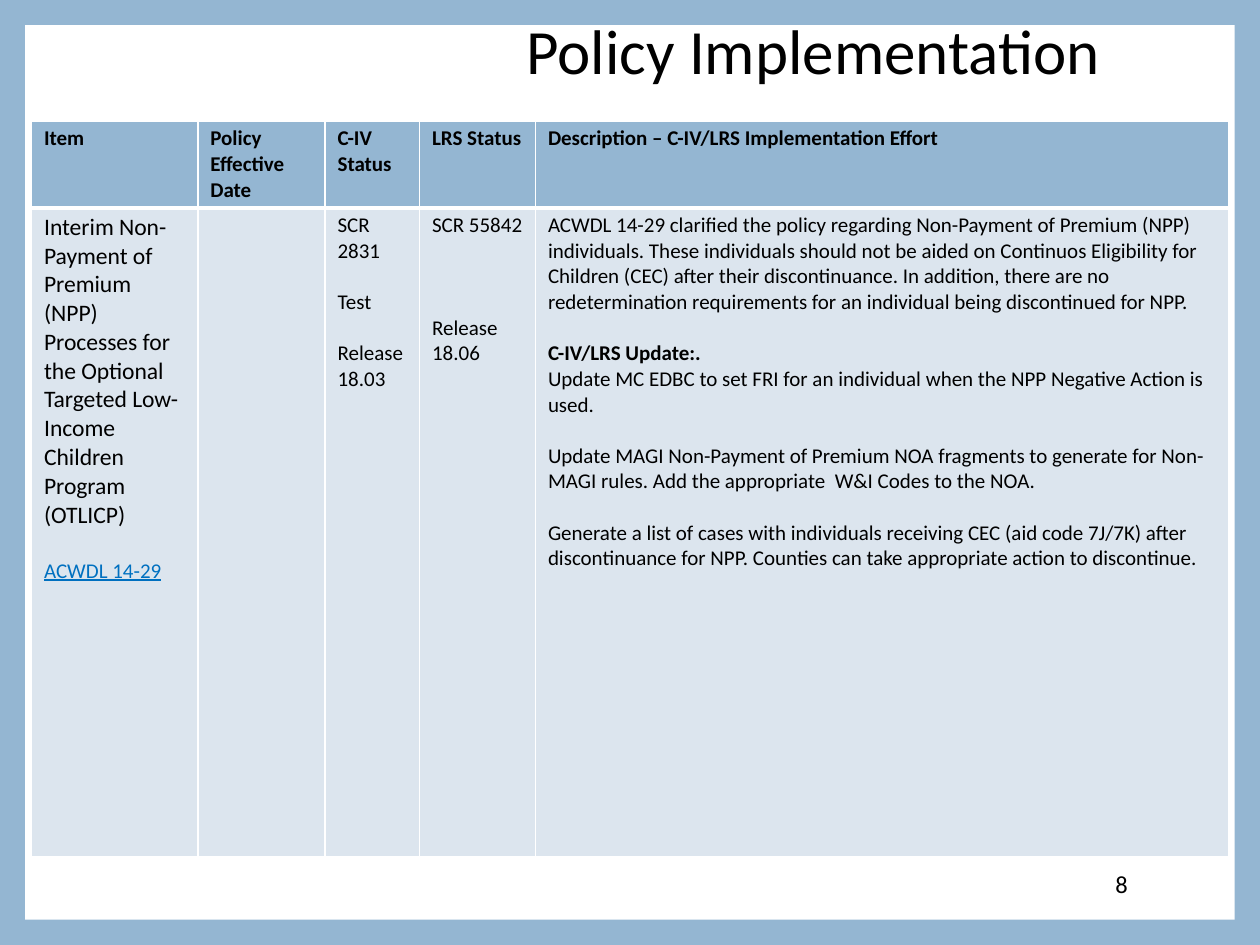
import pptx
import pptx.util
import pptx.dml.color
import pptx.enum.shapes
import pptx.enum.text
from lxml import etree
from pptx.util import Inches, Pt

RGBColor = pptx.dml.color.RGBColor
PP_ALIGN = pptx.enum.text.PP_ALIGN
MIDDLE = pptx.enum.text.MSO_ANCHOR.MIDDLE

BLUE = RGBColor(0x94, 0xB6, 0xD2)
PALE = RGBColor(0xDC, 0xE5, 0xEE)
WHITE = RGBColor(0xFF, 0xFF, 0xFF)
BLACK = RGBColor(0, 0, 0)
LINK = RGBColor(0x00, 0x70, 0xC0)
FONT = "Calibri"
A = "http://schemas.openxmlformats.org/drawingml/2006/main"
LINE = 14.65  # height in points of one line of 12 pt text

COLUMNS = [1.32, 1.01, 0.75, 0.92, 5.5]
ROWS = [0.69, 5.15]
HEADERS = ["Item", "Policy Effective Date", "C-IV Status", "LRS Status",
           "Description – C-IV/LRS Implementation Effort"]
# Each paragraph: text, then formatting that differs from the default.
BODY = [
    [("Interim Non-Payment of Premium (NPP) Processes for the Optional "
      "Targeted Low-Income Children Program (OTLICP)", {"size": 13.5}),
     ("ACWDL 14-29", {"before": 16.5, "color": LINK, "underline": True})],
    [],
    [("SCR 2831", {}), ("Test", {"before": LINE}),
     ("Release", {"before": LINE}), ("18.03", {})],
    [("SCR 55842", {}), ("Release", {"before": 3 * LINE}), ("18.06", {})],
    [("ACWDL 14-29 clarified the policy regarding Non-Payment of Premium (NPP) "
      "individuals. These individuals should not be aided on Continuos "
      "Eligibility for Children (CEC) after their discontinuance. In addition, "
      "there are no redetermination requirements for an individual being "
      "discontinued for NPP.", {}),
     ("C-IV/LRS Update:.", {"before": LINE, "bold": True}),
     ("Update MC EDBC to set FRI for an individual when the NPP Negative "
      "Action is used.", {}),
     ("Update MAGI Non-Payment of Premium NOA fragments to generate for "
      "Non-MAGI rules. Add the appropriate  W&I Codes to the NOA.",
      {"before": LINE}),
     ("Generate a list of cases with individuals receiving CEC (aid code "
      "7J/7K) after discontinuance for NPP. Counties can take appropriate "
      "action to discontinue.", {"before": LINE})],
]


def format_paragraph(p, text, size=12, color=BLACK, bold=False,
                     underline=False, before=0, align=PP_ALIGN.LEFT):
    p.text = text
    p.alignment = align
    p.space_before = Pt(before)
    p.font.name = FONT
    p.font.size = Pt(size)
    p.font.color.rgb = color
    p.font.bold = bold
    p.font.underline = underline


def add_panel(s, box):
    s.background.fill.solid()
    s.background.fill.fore_color.rgb = BLUE
    panel = s.shapes.add_shape(pptx.enum.shapes.MSO_SHAPE.RECTANGLE, *box)
    panel.shadow.inherit = False
    panel.fill.solid()
    panel.fill.fore_color.rgb = WHITE
    panel.line.fill.background()
    # Send the panel behind the title placeholder.
    s.shapes.title._element.addprevious(panel._element)


def set_title(s, box, text):
    title = s.shapes.title
    title.left, title.top, title.width, title.height = box
    tf = title.text_frame
    tf.vertical_anchor = MIDDLE
    tf.auto_size = pptx.enum.text.MSO_AUTO_SIZE.NONE
    p = tf.paragraphs[0]
    format_paragraph(p, text, size=36, align=PP_ALIGN.RIGHT)
    p.line_spacing = 0.9


def set_borders(cell, **widths):
    """Draw white borders; each keyword is a side (L, R, T, B) in points."""
    tc_pr = cell._tc.get_or_add_tcPr()
    for side, width in widths.items():
        ln = etree.SubElement(tc_pr, f"{{{A}}}ln{side}", w=str(Pt(width)))
        fill = etree.SubElement(ln, f"{{{A}}}solidFill")
        etree.SubElement(fill, f"{{{A}}}srgbClr", val=str(WHITE))


def fill_cell(cell, paragraphs, color, top, bottom):
    set_borders(cell, L=1, R=1, T=top, B=bottom)
    cell.fill.solid()
    cell.fill.fore_color.rgb = color
    cell.margin_left = cell.margin_right = Inches(0.1)
    cell.margin_top = cell.margin_bottom = Inches(0.04)
    tf = cell.text_frame
    for i, (text, style) in enumerate(paragraphs):
        p = tf.add_paragraph() if i else tf.paragraphs[0]
        format_paragraph(p, text, **style)


def add_policy_table(s, box):
    table = s.shapes.add_table(len(ROWS), len(COLUMNS), *box).table
    table.first_row = table.horz_banding = False
    for row, height in zip(table.rows, ROWS):
        row.height = Inches(height)
    for i, width in enumerate(COLUMNS):
        table.columns[i].width = Inches(width)
        header = [(HEADERS[i], {"bold": True})]
        fill_cell(table.cell(0, i), header, BLUE, top=1, bottom=3)
        fill_cell(table.cell(1, i), BODY[i], PALE, top=3, bottom=1)


def add_page_number(s, box, number):
    tf = s.shapes.add_textbox(*box).text_frame
    tf.word_wrap = True
    tf.vertical_anchor = MIDDLE
    format_paragraph(tf.paragraphs[0], number, size=14, align=PP_ALIGN.RIGHT)


def inches(*values):
    return [Inches(v) for v in values]


def main():
    prs = pptx.Presentation()
    prs.slide_width, prs.slide_height = inches(10, 7.5)
    s = prs.slides.add_slide(prs.slide_layouts[5])
    add_panel(s, inches(0.2, 0.2, 9.6, 7.1))
    set_title(s, inches(0.5, 0.08, 8.33, 0.7), "Policy Implementation")
    add_page_number(s, inches(7.65, 6.81, 1.4, 0.4), "8")
    add_policy_table(s, inches(0.25, 0.96, 9.5, 5.85))
    prs.save("out.pptx")


if __name__ == "__main__":
    main()
